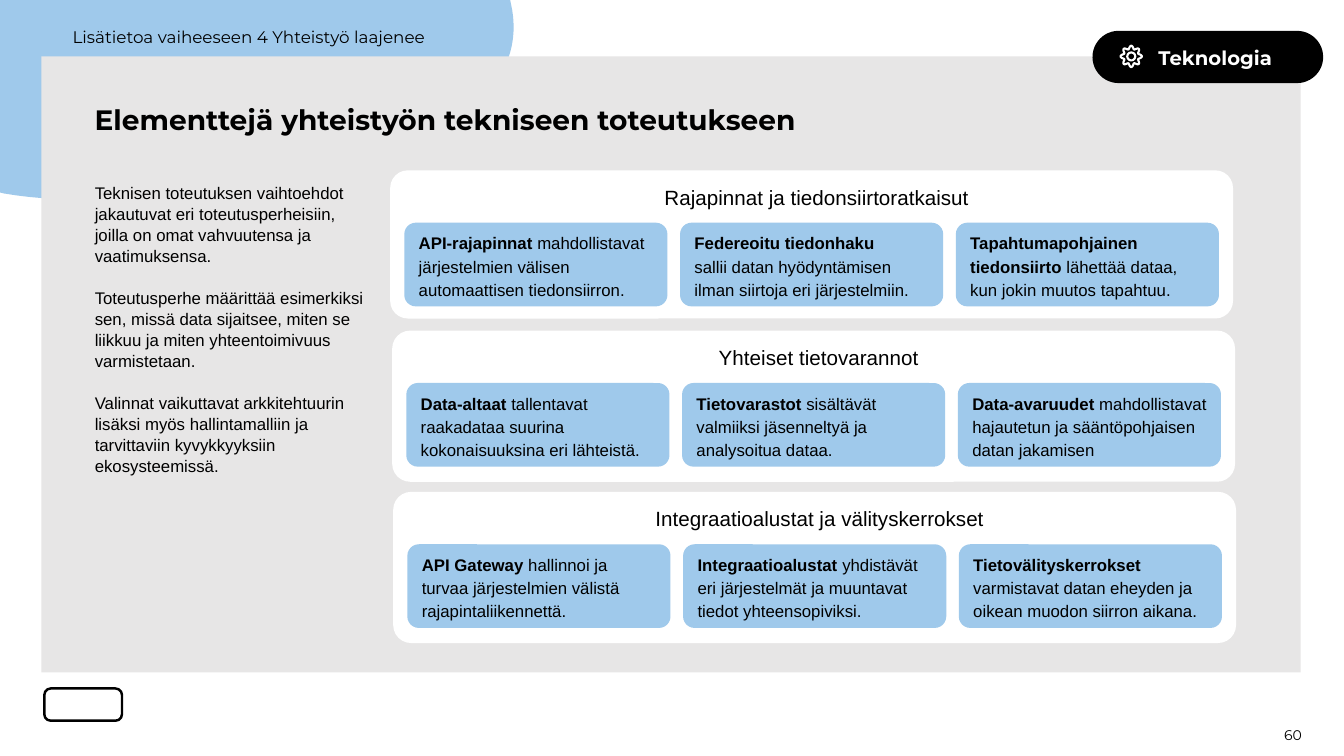
from math import cos, pi, sin

from pptx import Presentation
from pptx.dml.color import RGBColor
from pptx.enum.shapes import MSO_SHAPE
from pptx.enum.text import MSO_ANCHOR, PP_ALIGN
from pptx.util import Inches, Pt

RECTANGLE = MSO_SHAPE.RECTANGLE
ROUNDED = MSO_SHAPE.ROUNDED_RECTANGLE
OVAL = MSO_SHAPE.OVAL
TOP, MIDDLE = MSO_ANCHOR.TOP, MSO_ANCHOR.MIDDLE
LEFT, CENTER, RIGHT = PP_ALIGN.LEFT, PP_ALIGN.CENTER, PP_ALIGN.RIGHT

BLACK, WHITE, BLUE, GREY = "000000", "FFFFFF", "9FC9EB", "E7E6E6"
HEADING_FONT, BODY_FONT = "Montserrat", "Arial"

INTRO = [
    "Teknisen toteutuksen vaihtoehdot jakautuvat eri toteutusperheisiin, "
    "joilla on omat vahvuutensa ja vaatimuksensa.",
    "Toteutusperhe määrittää esimerkiksi sen, missä data sijaitsee, "
    "miten se liikkuu ja miten yhteentoimivuus varmistetaan.",
    "Valinnat vaikuttavat arkkitehtuurin lisäksi myös hallintamalliin ja "
    "tarvittaviin kyvykkyyksiin ekosysteemissä.",
]

PANELS = [
    ((3.87, 1.69, 8.36, 1.47), "Rajapinnat ja tiedonsiirtoratkaisut", [
        ("API-rajapinnat ", "mahdollistavat järjestelmien välisen automaattisen tiedonsiirron."),
        ("Federeoitu tiedonhaku\n", "sallii datan hyödyntämisen ilman siirtoja eri järjestelmiin."),
        ("Tapahtumapohjainen tiedonsiirto ", "lähettää dataa, kun jokin muutos tapahtuu."),
    ]),
    ((3.89, 3.28, 8.36, 1.5), "Yhteiset tietovarannot", [
        ("Data-altaat ", "tallentavat raakadataa suurina kokonaisuuksina eri lähteistä."),
        ("Tietovarastot ", "sisältävät valmiiksi jäsenneltyä ja analysoitua dataa."),
        ("Data-avaruudet ", "mahdollistavat hajautetun ja sääntöpohjaisen datan jakamisen"),
    ]),
    ((3.9, 4.88, 8.36, 1.5), "Integraatioalustat ja välityskerrokset", [
        ("API Gateway ", "hallinnoi ja turvaa järjestelmien välistä rajapintaliikennettä."),
        ("Integraatioalustat ", "yhdistävät eri järjestelmät ja muuntavat tiedot yhteensopiviksi."),
        ("Tietovälityskerrokset ", "varmistavat datan eheyden ja oikean muodon siirron aikana."),
    ]),
]


def color(value):
    return RGBColor.from_string(value)


def paint(shape, fill=None, line=None, width=1):
    shape.shadow.inherit = False
    if fill:
        shape.fill.solid()
        shape.fill.fore_color.rgb = color(fill)
    else:
        shape.fill.background()
    if line:
        shape.line.color.rgb = color(line)
        shape.line.width = Pt(width)
    else:
        shape.line.fill.background()
    return shape


def add_block(page, kind, box, fill=None, line=None, width=1, corner=None):
    shape = page.shapes.add_shape(kind, *map(Inches, box))
    if corner is not None:
        shape.adjustments[0] = corner
    return paint(shape, fill, line, width)


def add_outline(page, points):
    scaled = [(Inches(x), Inches(y)) for x, y in points]
    builder = page.shapes.build_freeform(*scaled[0])
    builder.add_line_segments(scaled[1:], close=True)
    return builder.convert_to_shape()


def prepare_frame(shape, insets, anchor=TOP):
    frame = shape.text_frame
    frame.word_wrap = True
    frame.vertical_anchor = anchor
    frame.margin_left, frame.margin_top, frame.margin_right, frame.margin_bottom = map(Inches, insets)
    return frame


def set_font(para, size, name, hex_color=BLACK, bold=False):
    para.font.size = Pt(size)
    para.font.name = name
    para.font.color.rgb = color(hex_color)
    para.font.bold = bold


def add_text(page, box, texts, size, name, hex_color=BLACK, bold=False, align=LEFT,
             spacing=1, gap=0, insets=(0, 0, 0, 0), anchor=TOP):
    frame = prepare_frame(page.shapes.add_textbox(*map(Inches, box)), insets, anchor)
    for index, text in enumerate(texts):
        para = frame.paragraphs[0] if index == 0 else frame.add_paragraph()
        para.text = text
        para.alignment = align
        para.line_spacing = spacing
        para.space_before = Pt(gap if index else 0)
        set_font(para, size, name, hex_color, bold)


def bezier(start, first, second, end, steps=24):
    for step in range(1, steps + 1):
        t = step / steps
        weights = ((1 - t) ** 3, 3 * t * (1 - t) ** 2, 3 * t * t * (1 - t), t ** 3)
        yield tuple(sum(weight * point[axis] for weight, point in
                        zip(weights, (start, first, second, end))) for axis in (0, 1))


def add_backdrop(page):
    edge = [
        *bezier((5.08, 0.1), (5.15, 0.53), (4.97, 0.96), (4.32, 1.24)),
        *bezier((4.32, 1.24), (2.58, 1.95), (0.96, 2.08), (0.04, 1.92)),
    ]
    paint(add_outline(page, [(0, 0), (5.06, 0), (5.08, 0.1), *edge, (0, 1.91)]), BLUE)
    add_block(page, RECTANGLE, (0.41, 0.56, 12.49, 6.11), GREY)


def add_gear(page, center_x, center_y):
    points = []
    for step in range(96):
        angle = 2 * pi * step / 96
        radius = 0.09 + 0.016 * cos(8 * angle)
        points.append((center_x + radius * cos(angle), center_y + radius * sin(angle)))
    paint(add_outline(page, points), line=WHITE, width=1.5)
    add_block(page, OVAL, (center_x - 0.04, center_y - 0.04, 0.08, 0.08), line=WHITE, width=1.5)


def add_topic_badge(page, box):
    left, top, width, height = box
    add_block(page, ROUNDED, box, BLACK, BLACK, 2, 0.5)
    add_gear(page, left + 0.37, top + 0.24)
    add_text(page, (left + 0.64, top + 0.16, 1.4, 0.23), ["Teknologia"], 14, HEADING_FONT,
             WHITE, True, spacing=0.9)


def add_card(page, box, lead, rest):
    card = add_block(page, ROUNDED, box, BLUE, corner=0.137)
    para = prepare_frame(card, (0.11, 0.04, 0.1, 0)).paragraphs[0]
    para.alignment = LEFT
    para.line_spacing = 1.15
    set_font(para, 12, BODY_FONT)
    span = para.add_run()
    span.text = lead.rstrip("\n")
    span.font.bold = True
    if lead.endswith("\n"):
        para.add_line_break()
    para.add_run().text = rest


def add_panel(page, box, heading, cards):
    left, top = box[:2]
    add_block(page, ROUNDED, box, WHITE, corner=0.119)
    add_text(page, (left + 0.51, top + 0.02, 7.44, 0.47), [heading], 14.7, BODY_FONT,
             align=CENTER, insets=(0.13,) * 4)
    for column, (lead, rest) in enumerate(cards):
        add_card(page, (left + 0.14 + 2.735 * column, top + 0.52, 2.61, 0.83), lead, rest)


def add_footer(page):
    add_block(page, ROUNDED, (0.44, 6.83, 0.77, 0.32), line=BLACK, width=1.75, corner=0.2)
    add_text(page, (11.66, 7.15, 1.35, 0.28), ["60"], 10, HEADING_FONT, align=RIGHT,
             insets=(0.1, 0.05, 0.1, 0.05), anchor=MIDDLE)


def main():
    deck = Presentation()
    deck.slide_width, deck.slide_height = Inches(13.33), Inches(7.5)
    page = deck.slides.add_slide(deck.slide_layouts[6])
    add_backdrop(page)
    add_text(page, (0.72, 0.29, 6.44, 0.41), ["Lisätietoa vaiheeseen 4 Yhteistyö laajenee"],
             12, HEADING_FONT, spacing=0.9)
    add_topic_badge(page, (10.85, 0.32, 2.26, 0.49))
    add_text(page, (0.84, 0.96, 8.75, 0.44), ["Elementtejä yhteistyön tekniseen toteutukseen"],
             20, HEADING_FONT, bold=True, insets=(0.1, 0.05, 0.1, 0.05), anchor=MIDDLE)
    add_text(page, (0.94, 1.8, 2.73, 2.96), INTRO, 12, BODY_FONT, spacing=1.05, gap=14.5)
    for box, heading, cards in PANELS:
        add_panel(page, box, heading, cards)
    add_footer(page)
    deck.save("out.pptx")


if __name__ == "__main__":
    main()
